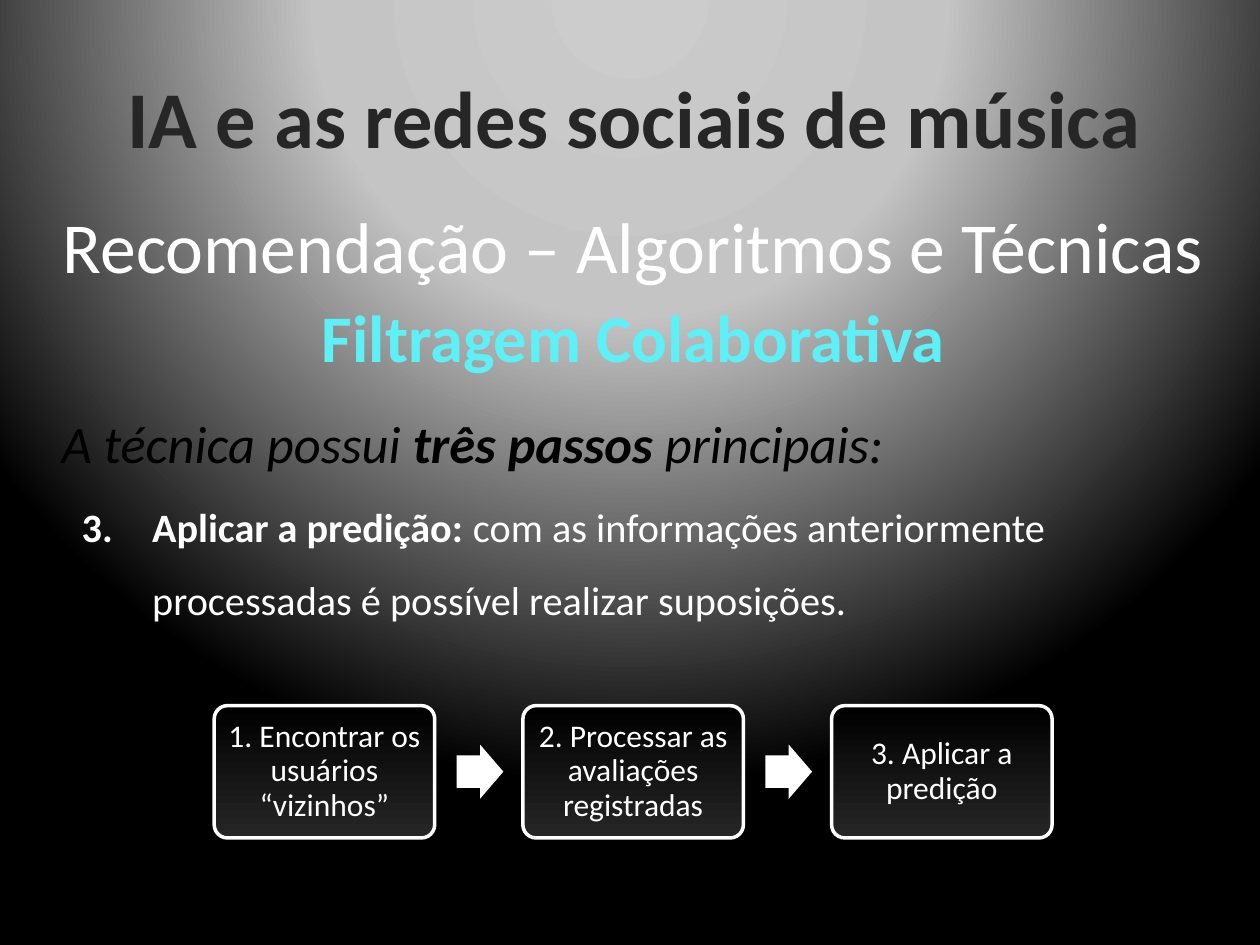
from pptx import Presentation
from pptx.dml.color import RGBColor
from pptx.enum.shapes import MSO_SHAPE
from pptx.enum.text import MSO_ANCHOR, MSO_AUTO_SIZE, PP_ALIGN
from pptx.oxml import parse_xml
from pptx.oxml.ns import nsdecls, qn
from pptx.util import Inches, Pt

BOX = MSO_SHAPE.ROUNDED_RECTANGLE
ARROW = MSO_SHAPE.RIGHT_ARROW
MID, TOP = MSO_ANCHOR.MIDDLE, MSO_ANCHOR.TOP
MID_AL, LEFT = PP_ALIGN.CENTER, PP_ALIGN.LEFT

HUES = {"dark": "262626", "black": "000000", "white": "FFFFFF",
        "cyan": "5EF0F7", "light": "CCCCCC", "grey": "C4C4C4"}

deck = Presentation()
deck.slide_width, deck.slide_height = Inches(10), Inches(7.5)
slide = deck.slides.add_slide(deck.slide_layouts[5])


def area(x, y, w, h):
    wide, high = deck.slide_width / 100, deck.slide_height / 100
    return int(x * wide), int(y * high), int(w * wide), int(h * high)


def write(shape, runs, hue, size, frame, para):
    text = shape.text_frame
    for key, val in {"word_wrap": True, "auto_size": MSO_AUTO_SIZE.NONE, **frame}.items():
        setattr(text, key, val)
    line = text.paragraphs[0]
    for key, val in para.items():
        setattr(line, key, val)
    for words, style in runs:
        run = line.add_run()
        run.text = words
        for key, val in {"name": "Calibri", "size": Pt(size), **style}.items():
            setattr(run.font, key, val)
        run.font.color.rgb = RGBColor.from_string(HUES[hue])
    return line


slide.background.fill.gradient()
old = slide.element.find(".//" + qn("a:gradFill"))
stops = "".join(
    f'<a:gs pos="{pos * 1000}"><a:srgbClr val="{HUES[hue]}"/></a:gs>'
    for pos, hue in [(0, "light"), (40, "grey"), (100, "black")])
old.getparent().replace(old, parse_xml(
    f'<a:gradFill {nsdecls("a")} rotWithShape="1"><a:gsLst>{stops}</a:gsLst>'
    '<a:path path="circle"><a:fillToRect l="50000" t="-80000" r="50000" b="180000"/>'
    '</a:path></a:gradFill>'))

title = slide.shapes.title
title.left, title.top, title.width, title.height = area(2.8, 4, 95, 16.67)
write(title, [("IA e as redes sociais de música", {"bold": True})], "dark", 46,
      {"vertical_anchor": MID}, {"alignment": MID_AL})

head = {"alignment": MID_AL, "line_spacing": Pt(72)}
body = {"alignment": LEFT, "line_spacing": 1.5}
texts = [
    ((3.9, 39.47, 91.7, 11.47), "black", 30, TOP, body,
     [("A técnica possui ", {"italic": True}),
      ("três passos", {"italic": True, "bold": True}),
      (" principais:", {"italic": True})]),
    ((2.8, 15.47, 95, 16.67), "white", 41, MID, head,
     [("Recomendação – Algoritmos e Técnicas", {})]),
    ((2.8, 24.8, 95, 16.67), "cyan", 38, MID, head,
     [("Filtragem Colaborativa", {"bold": True})]),
    ((5.5, 50, 90.2, 16.8), "white", 23, TOP, body,
     [("3.\tAplicar a predição:", {"bold": True}),
      (" com as informações anteriormente processadas é possível realizar suposições.", {})]),
]
for place, hue, size, anchor, para, runs in texts:
    box = slide.shapes.add_textbox(*area(*place))
    line = write(box, runs, hue, size, {"vertical_anchor": anchor}, para)
hang = Inches(0.56)
props = line._p.get_or_add_pPr()
props.set("marL", str(hang))
props.set("indent", str(-hang))

steps = ["1. Encontrar os usuários “vizinhos”",
         "2. Processar as avaliações registradas",
         "3. Aplicar a predição"]
left, pitch = 17, 24.5
inset = {f"margin_{side}": Inches(0.07) for side in ("left", "right", "top", "bottom")}
for i, step in enumerate(steps):
    x = left + i * pitch
    box = slide.shapes.add_shape(BOX, *area(x, 74.67, 17.5, 14))
    box.shadow.inherit = False
    box.adjustments[0] = 0.1
    box.fill.gradient()
    box.fill.gradient_angle = 270
    for stop, pos, hue in zip(box.fill.gradient_stops, (0, 1), ("black", "dark")):
        stop.position = pos
        stop.color.rgb = RGBColor.from_string(HUES[hue])
    box.line.color.rgb = RGBColor.from_string(HUES["white"])
    box.line.width = Pt(2)
    write(box, [(step, {})], "white", 18, {"vertical_anchor": MID, **inset},
          {"alignment": MID_AL, "line_spacing": 0.9})
    if i < len(steps) - 1:
        arrow = slide.shapes.add_shape(ARROW, *area(x + 19.25, 78.8, 3.7, 5.73))
        arrow.shadow.inherit = False
        arrow.adjustments[0], arrow.adjustments[1] = 0.6, 0.5
        arrow.fill.solid()
        arrow.fill.fore_color.rgb = RGBColor.from_string(HUES["white"])
        arrow.line.fill.background()

deck.save("out.pptx")
